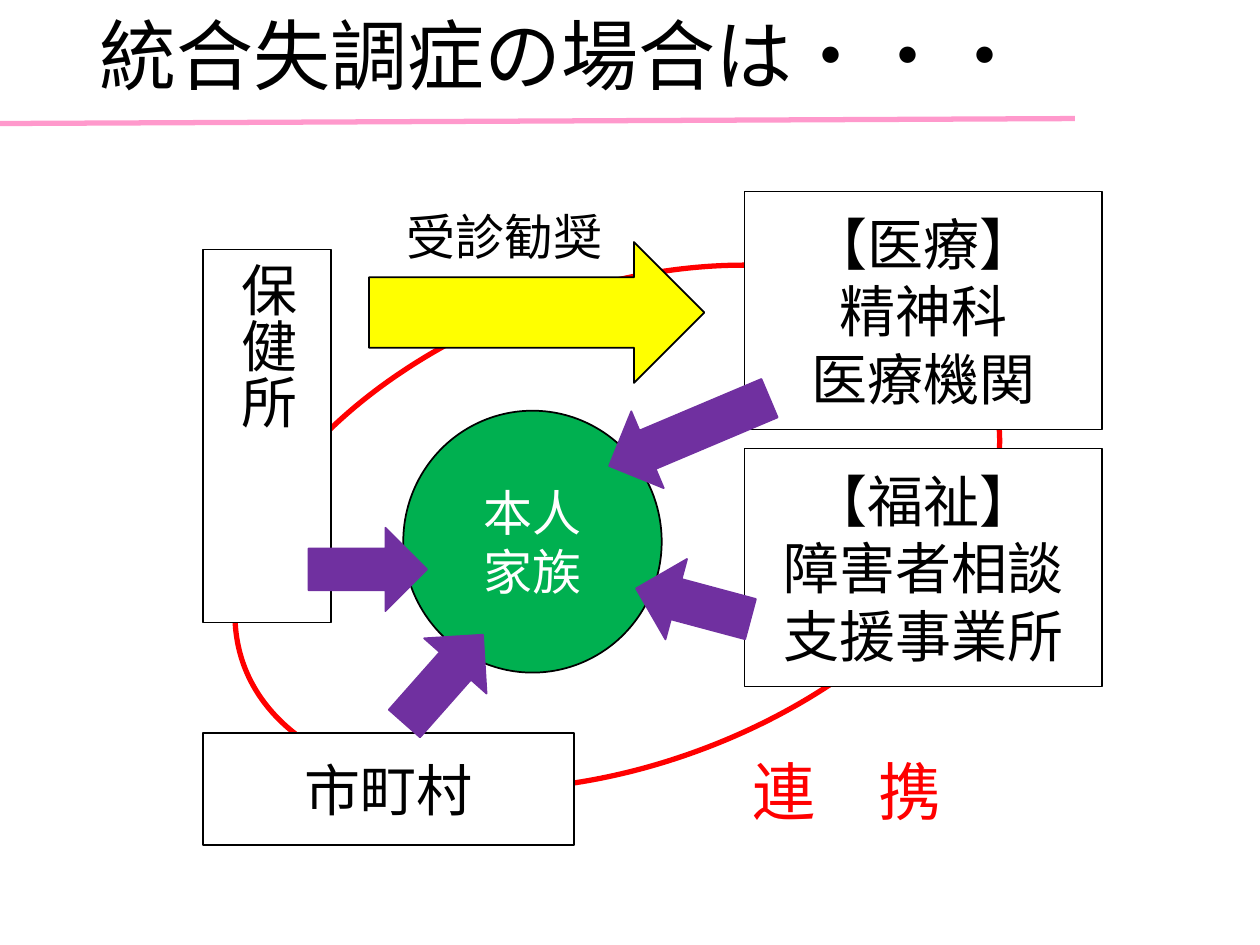
from lxml.etree import SubElement
from pptx import Presentation
from pptx.dml.color import RGBColor
from pptx.enum.shapes import MSO_CONNECTOR as Line, MSO_SHAPE as Shape
from pptx.enum.text import MSO_ANCHOR as Anchor, MSO_AUTO_SIZE as Fit, PP_ALIGN as Align
from pptx.oxml.ns import qn
from pptx.util import Cm, Pt

BLACK, WHITE, RED, PINK = "000000", "FFFFFF", "FF0000", "FF99CC"
YELLOW, GREEN, PURPLE = "FFFF00", "00B050", "7030A0"


def color(value):
    return RGBColor.from_string(value)


class Board:
    """Holds the text style and the page being drawn."""
    font = "Cabin"
    size = 32

    def __init__(self, page):
        self.page = page

    def set_text(self, shape, lines, ink=BLACK, size=None, font=None, align=Align.CENTER,
                 spacing=None, **frame_format):
        frame = shape.text_frame
        settings = dict(word_wrap=True, auto_size=Fit.NONE, vertical_anchor=Anchor.MIDDLE)
        for name, value in (settings | frame_format).items():
            setattr(frame, name, value)
        frame.text = "\n".join(lines)
        for para in frame.paragraphs:
            para.alignment = align
            para.line_spacing = spacing
            for span in para.runs:
                span.font.size = Pt(size or self.size)
                span.font.name = font or self.font
                span.font.color.rgb = color(ink)
                # East Asian glyphs take their own typeface entry
                SubElement(span.font._element, qn("a:ea"), typeface=font or self.font)

    def title(self, text, *place):
        holder = self.page.shapes.title
        for name, value in zip(("left", "top", "width", "height"), place):
            setattr(holder, name, Cm(value))
        self.set_text(holder, [text], size=44, align=Align.LEFT, spacing=0.9)

    def rule(self, x1, y1, x2, y2, ink, width):
        line = self.page.shapes.add_connector(Line.STRAIGHT, *map(Cm, (x1, y1, x2, y2)))
        line.line.color.rgb = color(ink)
        line.line.width = Pt(width)
        SubElement(line._element.spPr, qn("a:effectLst"))

    def shape(self, kind, *place, fill=WHITE, edge=BLACK, width=1, turn=0):
        shape = self.page.shapes.add_shape(kind, *map(Cm, place))
        shape.shadow.inherit = False
        shape.rotation = turn
        if fill:
            shape.fill.solid()
            shape.fill.fore_color.rgb = color(fill)
        else:
            shape.fill.background()
        shape.line.color.rgb = color(edge)
        shape.line.width = Pt(width)
        return shape

    def box(self, lines, *place, **text_format):
        box = self.shape(Shape.RECTANGLE, *place)
        self.set_text(box, lines, **text_format)
        return box

    def arrow(self, *place, ink=PURPLE, edge=PURPLE, turn=0):
        self.shape(Shape.RIGHT_ARROW, *place, fill=ink, edge=edge, turn=turn)

    def label(self, text, *place, **text_format):
        label = self.page.shapes.add_textbox(*map(Cm, place))
        self.set_text(label, [text], **text_format)


def main():
    deck = Presentation()
    deck.slide_width, deck.slide_height = Cm(25.4), Cm(19.05)
    board = Board(deck.slides.add_slide(deck.slide_layouts[5]))

    board.rule(0, 2.49, 21.67, 2.39, PINK, 3)
    board.shape(Shape.OVAL, 4.42, 5.84, 16.05, 9.58, fill=None, edge=RED, width=3, turn=339.7)
    board.title("統合失調症の場合は・・・", 1.75, 0, 19.91, 2.39)

    left, right, partner = 4.09, 15.01, (7.21, 4.8)
    health_center = board.box(["保健所"], left, 5.03, 2.59, 7.52, align=Align.LEFT)
    health_center.text_frame._txBody.bodyPr.set("vert", "eaVert")
    board.box(["【医療】", "精神科", "医療機関"], right, 3.86, *partner)
    board.box(["【福祉】", "障害者相談支援事業所"], right, 9.04, *partner)
    board.arrow(7.44, 4.88, 6.76, 2.84, ink=YELLOW, edge=BLACK)
    board.box(["市町村"], left, 14.78, 7.49, 2.26)

    family = board.shape(Shape.OVAL, 8.13, 8.28, 5.21, 5.28, fill=GREEN)
    board.set_text(family, ["本人", "家族"], ink=WHITE, size=28, font="Noto Sans CJK JP")
    board.label("受診勧奨", 7.95, 4.04, 4.5, 1.45, size=28, align=Align.LEFT,
                word_wrap=False, auto_size=Fit.SHAPE_TO_FIT_TEXT, vertical_anchor=Anchor.TOP)

    for x, y, length, turn in ((6.22, 10.64, 2.39, 0), (7.75, 12.85, 2.39, 311.5),
                               (12.14, 7.87, 3.51, 157.1), (12.78, 11.33, 2.39, 195)):
        board.arrow(x, y, length, 1.68, turn=turn)

    board.label("連　携", 13.34, 14.81, 7.49, 2.26, ink=RED, size=36)
    deck.save("out.pptx")


if __name__ == "__main__":
    main()
